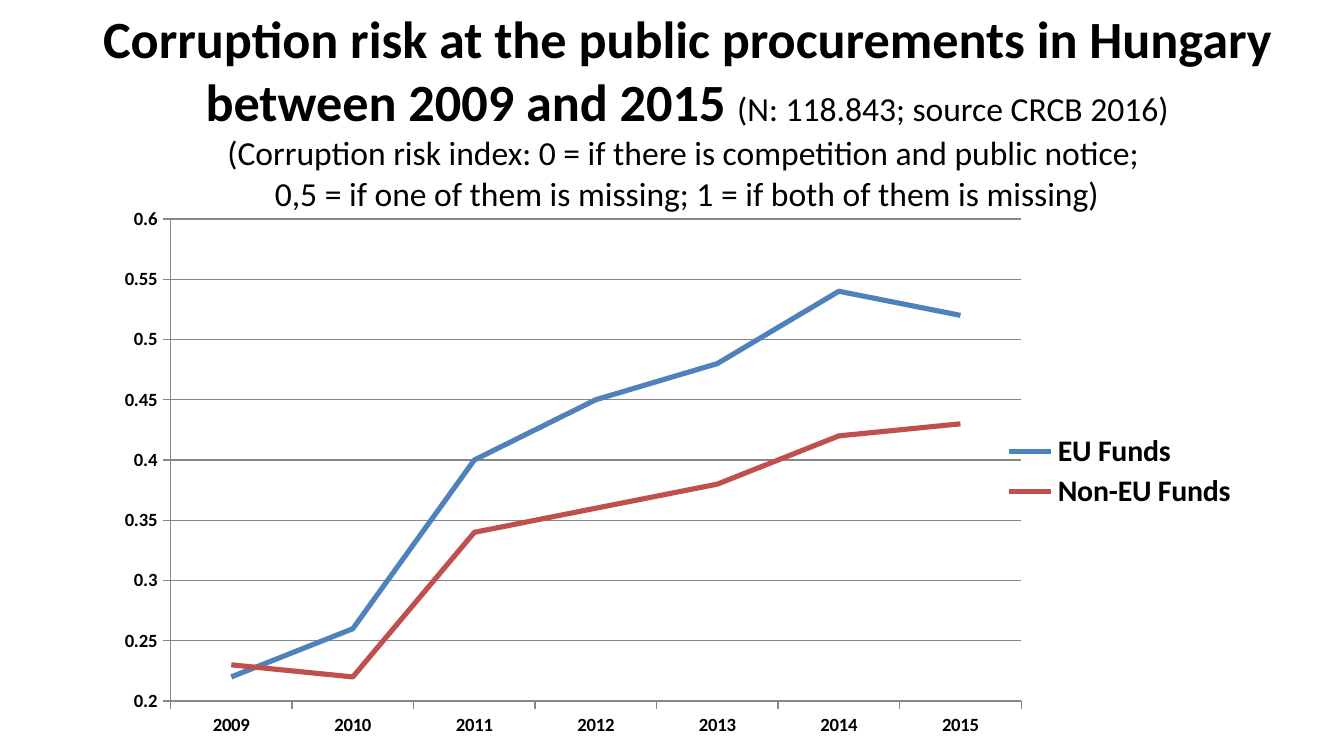
from lxml import etree
from pptx import Presentation
from pptx.chart.data import CategoryChartData
from pptx.dml.color import RGBColor
from pptx.enum import chart as ch, text as tx
from pptx.oxml import ns
from pptx.util import Cm, Pt

# Content
FONT = "Calibri"
BLACK, GRID = "000000", "868686"
HEADING = [
    [("Corruption risk at the public procurements in Hungary between 2009 and 2015 ", 28, True),
     ("(N: 118.843; source CRCB 2016)", 18, False)],
    [("(Corruption risk index: 0 = if there is competition and public notice; ", 18, False)],
    [("0,5 = if one of them is missing; 1 = if both of them is missing)", 18, False)],
]
YEARS = [str(year) for year in range(2009, 2016)]
FUNDS = [
    ("EU Funds", "4F81BD", (0.22, 0.26, 0.4, 0.45, 0.48, 0.54, 0.52)),
    ("Non-EU Funds", "C0504D", (0.23, 0.22, 0.34, 0.36, 0.38, 0.42, 0.43)),
]


def rgb(value):
    return RGBColor.from_string(value)


def style_font(font, size, bold=True, color=BLACK):
    font.name, font.size, font.bold = FONT, Pt(size), bold
    font.color.rgb = rgb(color)


def add_text(paragraph, words, **style):
    run = paragraph.add_run()
    run.text = words
    style_font(run.font, **style)


def style_line(line, color, width):
    line.color.rgb = rgb(color)
    line.width = Pt(width)


def set_layout(parent, before, inner=False, **box):
    """Place a chart part by fractions of the chart area."""
    for old in parent.findall(ns.qn("c:layout")):
        parent.remove(old)
    layout = etree.Element(ns.qn("c:layout"))
    manual = etree.SubElement(layout, ns.qn("c:manualLayout"))
    settings = {"layoutTarget": "inner"} if inner else {}
    settings.update(xMode="edge", yMode="edge", **box)
    for tag, value in settings.items():
        etree.SubElement(manual, ns.qn(f"c:{tag}")).set("val", str(value))
    parent.find(ns.qn(before)).addprevious(layout)


prs = Presentation()
prs.slide_width, prs.slide_height = Cm(25.4), Cm(14.29)
slide = prs.slides.add_slide(prs.slide_layouts[5])

# Title
title = slide.shapes.title
title.left, title.top, title.width, title.height = Cm(1.09), Cm(0), Cm(23.8), Cm(4.19)
frame = title.text_frame
frame.word_wrap = True
frame.auto_size = tx.MSO_AUTO_SIZE.SHAPE_TO_FIT_TEXT
frame.vertical_anchor = tx.MSO_ANCHOR.TOP
for i, runs in enumerate(HEADING):
    paragraph = frame.add_paragraph() if i else frame.paragraphs[0]
    paragraph.alignment = tx.PP_ALIGN.CENTER
    paragraph.space_before = Pt(0)
    for words, size, bold in runs:
        add_text(paragraph, words, size=size, bold=bold)

# Line chart
data = CategoryChartData(number_format="General")
data.categories = YEARS
for name, _, values in FUNDS:
    data.add_series(name, values)
chart = slide.shapes.add_chart(ch.XL_CHART_TYPE.LINE, Cm(2.11), Cm(3.94),
                               Cm(21.41), Cm(9.96), data).chart
chart.has_title = False
style_font(chart.font, 10)
plot = chart.plots[0]
plot.vary_by_categories = False
for series, (_, color, _) in zip(plot.series, FUNDS):
    series.smooth = False
    series.marker.style = ch.XL_MARKER_STYLE.NONE
    style_line(series.format.line, color, 2.75)

# Axes
risk, years = chart.value_axis, chart.category_axis
risk.minimum_scale, risk.maximum_scale, risk.major_unit = 0.2, 0.6, 0.05
risk.has_major_gridlines = True
style_line(risk.major_gridlines.format.line, GRID, 0.75)
for axis in (risk, years):
    axis.major_tick_mark = ch.XL_TICK_MARK.OUTSIDE
    style_line(axis.format.line, GRID, 0.75)

# Legend, overlapping the right edge of the plot
chart.has_legend = True
legend = chart.legend
legend.position = ch.XL_LEGEND_POSITION.RIGHT
legend.include_in_layout = False
style_font(legend.font, 16)
legend_xml = chart.element.find(".//" + ns.qn("c:legend"))
set_layout(legend_xml, "c:overlay", x=0.78, y=0.42, w=0.22, h=0.16)
plot_xml = chart.element.find(".//" + ns.qn("c:plotArea"))
set_layout(plot_xml, "c:lineChart", inner=True, x=0.052, y=0.02, w=0.751, h=0.916)

prs.save("out.pptx")
